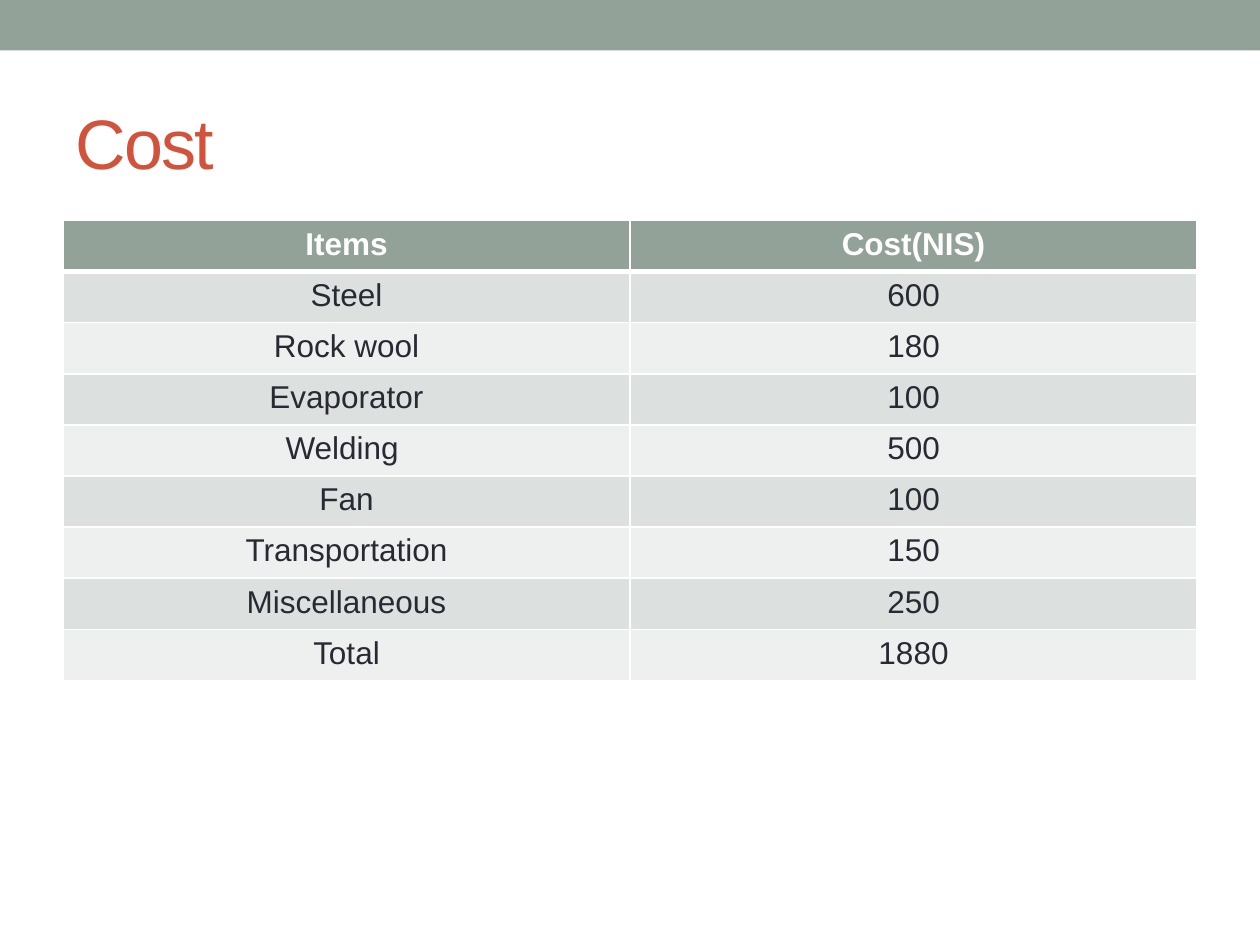
from dataclasses import dataclass

from lxml import etree
from pptx import Presentation
from pptx.dml.color import RGBColor
from pptx.enum import shapes, text
from pptx.oxml.ns import qn
from pptx.util import Inches, Pt


@dataclass(frozen=True)
class Theme:
    font: str = "Arial"
    sage: str = "93A299"
    dark: str = "DCE0DE"
    light: str = "EEF0EF"
    white: str = "FFFFFF"
    ink: str = "292934"
    red: str = "D2533C"
    title: int = 40
    body: int = 18
    thin: int = 1
    thick: int = 3


@dataclass(frozen=True)
class Item:
    name: str
    cost: str


THEME = Theme()
HEAD = Item("Items", "Cost(NIS)")
ITEMS = [
    Item("Steel", "600"),
    Item("Rock wool", "180"),
    Item("Evaporator", "100"),
    Item("Welding ", "500"),
    Item("Fan", "100"),
    Item("Transportation", "150"),
    Item("Miscellaneous", "250"),
    Item("Total", "1880"),
]


def paint(fill, color: str) -> None:
    fill.solid()
    fill.fore_color.rgb = RGBColor.from_string(color)


def write(para, words: str, size: int, color: str, bold: bool = False):
    run = para.add_run()
    run.text = words
    font = run.font
    font.name, font.size, font.bold = THEME.font, Pt(size), bold
    font.color.rgb = RGBColor.from_string(color)
    return run


def edge(cell, top: int, base: int) -> None:
    """Draw white borders; they must come before the fill in the cell XML."""
    props = cell._tc.get_or_add_tcPr()
    sides = {"L": THEME.thin, "R": THEME.thin, "T": top, "B": base}
    for spot, (side, width) in enumerate(sides.items()):
        line = etree.Element(qn(f"a:ln{side}"), w=str(Pt(width)))
        fill = etree.SubElement(line, qn("a:solidFill"))
        etree.SubElement(fill, qn("a:srgbClr"), val=THEME.white)
        props.insert(spot, line)


def add_band(slide) -> None:
    band = slide.shapes.add_shape(
        shapes.MSO_SHAPE.RECTANGLE, 0, 0, Inches(10), Inches(0.4))
    band.shadow.inherit = False
    paint(band.fill, THEME.sage)
    band.line.fill.background()


def add_title(slide, words: str) -> None:
    box = slide.shapes.add_textbox(
        Inches(0.5), Inches(0.58), Inches(9), Inches(1.08))
    frame = box.text_frame
    frame.word_wrap = True
    frame.vertical_anchor = text.MSO_ANCHOR.MIDDLE
    run = write(frame.paragraphs[0], words, THEME.title, THEME.red)
    run.font._element.set("spc", "-100")


def add_costs(slide, items: list[Item]) -> None:
    rows = [HEAD, *items]
    table = slide.shapes.add_table(
        len(rows), 2, Inches(0.5), Inches(1.75), Inches(9), Inches(3.65)).table
    for index, item in enumerate(rows):
        head = index == 0
        shade = THEME.sage if head else THEME.dark if index % 2 else THEME.light
        ink = THEME.white if head else THEME.ink
        top = THEME.thick if index == 1 else THEME.thin
        base = THEME.thick if head else THEME.thin
        for col, words in enumerate((item.name, item.cost)):
            cell = table.cell(index, col)
            paint(cell.fill, shade)
            edge(cell, top, base)
            para = cell.text_frame.paragraphs[0]
            para.alignment = text.PP_ALIGN.CENTER
            write(para, words, THEME.body, ink, head)


def main() -> None:
    deck = Presentation()
    deck.slide_width, deck.slide_height = Inches(10), Inches(7.5)
    slide = deck.slides.add_slide(deck.slide_layouts[6])
    paint(slide.background.fill, THEME.white)
    add_band(slide)
    add_title(slide, "Cost")
    add_costs(slide, ITEMS)
    deck.save("out.pptx")


if __name__ == "__main__":
    main()
